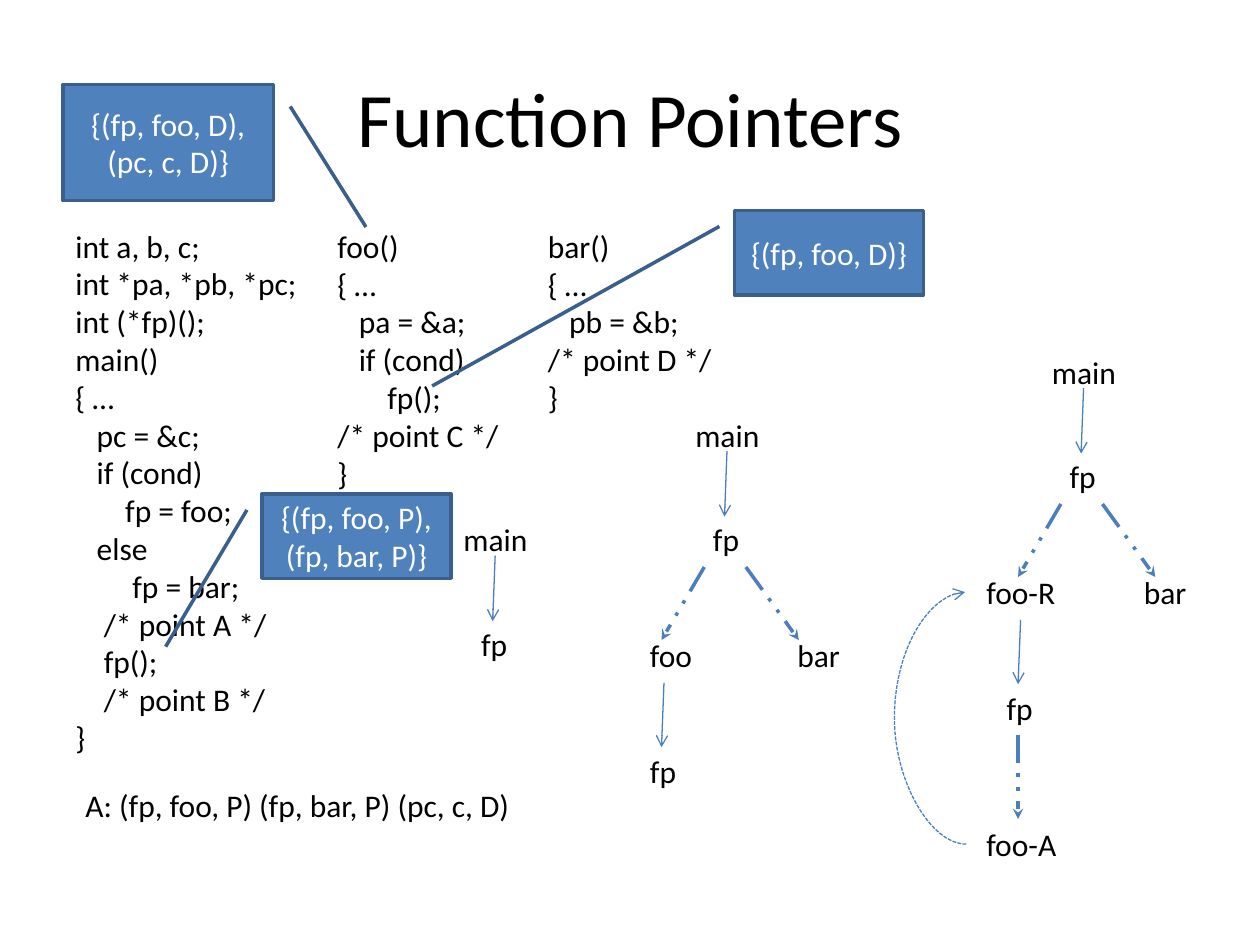
"""Build the Function Pointers slide with code columns, callouts and call graphs."""
from pptx import Presentation
from pptx import util as u
from pptx.dml import color
from pptx.enum import dml, shapes, text
from pptx.oxml import ns, xmlchemy

COLORS = {"text": "000000", "edge": "4B7EBC", "fill": "4F81BD", "border": "3A5F8C", "callout": "FFFFFF"}
SPACE_WIDTH = 0.0565
LABEL_WIDTHS = {"main": 0.72, "fp": 0.41, "foo": 0.54, "bar": 0.54, "foo-R": 0.75, "foo-A": 0.76}

presentation = Presentation()
presentation.slide_width, presentation.slide_height = u.Inches(10), u.Inches(7.5)
slide = presentation.slides.add_slide(presentation.slide_layouts[5])


def add_text(lines, left, top, width, height=0.4, wrap=True):
    box = slide.shapes.add_textbox(*map(u.Inches, (left, top, width, height)))
    frame = box.text_frame
    frame.word_wrap = wrap
    frame.auto_size = text.MSO_AUTO_SIZE.SHAPE_TO_FIT_TEXT
    frame.text = "\n".join(line.strip() for line in lines)
    for line, paragraph in zip(lines, frame.paragraphs):
        font = paragraph.font
        font.name, font.size = "Calibri", u.Pt(18)
        font.color.rgb = color.RGBColor.from_string(COLORS["text"])
        indent = len(line) - len(line.lstrip())
        if indent:
            margin = u.Inches(indent * SPACE_WIDTH)
            paragraph._p.get_or_add_pPr().set("marL", str(margin))


def add_arrow(start, end, weight=0.75, dash=None, head="arrow", kind=shapes.MSO_CONNECTOR.STRAIGHT):
    arrow = slide.shapes.add_connector(kind, *map(u.Inches, start + end))
    arrow.line.color.rgb = color.RGBColor.from_string(COLORS["edge"])
    arrow.line.width = u.Pt(weight)
    if dash:
        arrow.line.dash_style = dash
    tail = xmlchemy.OxmlElement("a:tailEnd")
    tail.set("type", head)
    properties = arrow._element.spPr
    properties.find(ns.qn("a:ln")).append(tail)
    properties.append(xmlchemy.OxmlElement("a:effectLst"))
    return arrow


title = slide.shapes.title
title.left, title.top, title.width, title.height = map(u.Inches, (0.5, 0.3, 9, 1.25))
title.text_frame.text = "Function Pointers"
title.text_frame.vertical_anchor = text.MSO_ANCHOR.MIDDLE
heading = title.text_frame.paragraphs[0]
heading.alignment = text.PP_ALIGN.CENTER
heading.font.name, heading.font.size = "Calibri", u.Pt(44)
heading.font.color.rgb = color.RGBColor.from_string(COLORS["text"])

main_code = """int a, b, c;
int *pa, *pb, *pc;
int (*fp)();
main()
{ …
   pc = &c;
   if (cond)
       fp = foo;
   else
        fp = bar;
    /* point A */
    fp();
    /* point B */
}"""
foo_code = """foo()
{ …
   pa = &a;
   if (cond)
       fp();
/* point C */
}"""
bar_code = """bar()
{ …
   pb = &b;
/* point D */
}"""
for code, left, width, height in [
    (main_code, 0.5, 2.17, 4.34),
    (foo_code, 2.58, 1.67, 2.22),
    (bar_code, 4.25, 1.67, 1.62),
]:
    add_text(code.split("\n"), left, 1.75, width, height)

labels = [("foo-A", 7.73, 6.5)]
branch_style = {"weight": 2, "dash": dml.MSO_LINE.DASH_DOT_DOT, "head": "stealth"}
for left, top, branches in [
    (3.58, 4.08, None),
    (5.42, 3.25, ("foo", -0.36, 0.81)),
    (8.25, 2.75, ("foo-R", -0.52, 0.73)),
]:
    labels += [("main", left, top), ("fp", left + 0.14, top + 0.83)]
    add_arrow((left + 0.35, top + 0.33), (left + 0.33, top + 0.85))
    if branches:
        callee, callee_shift, bar_shift = branches
        labels += [
            (callee, left + callee_shift, top + 1.75),
            ("bar", left + bar_shift, top + 1.75),
            ("fp", left - 0.36, top + 2.67),
        ]
        add_arrow((left + 0.17, top + 1.25), (left - 0.17, top + 1.83), **branch_style)
        add_arrow((left + 0.5, top + 1.25), (left + 0.92, top + 1.83), **branch_style)
        add_arrow((left - 0.15, top + 2.17), (left - 0.17, top + 2.68))
for label, left, top in labels:
    add_text([label], left, top, LABEL_WIDTHS[label], wrap=False)

add_arrow((8.08, 5.83), (8.08, 6.5), **branch_style)
recursion = add_arrow((7.67, 6.7), (7.66, 4.7), dash=dml.MSO_LINE.SQUARE_DOT, kind=shapes.MSO_CONNECTOR.CURVE)
guide = xmlchemy.OxmlElement("a:gd")
guide.set("name", "adj1")
guide.set("fmla", "val 5800000")
geometry = recursion._element.spPr.find(ns.qn("a:prstGeom"))
geometry.find(ns.qn("a:avLst")).append(guide)

for content, place, leader in [
    ("{(fp, foo, D),\n(pc, c, D)}", (0.5, 0.67, 1.67, 0.92), (0.19, 1.08, 1.23, 1.44)),
    ("{(fp, foo, P), (fp, bar, P)}", (2.08, 3.92, 1.5, 0.67), (0.19, -0.08, 1.81, -0.51)),
    ("{(fp, foo, D)}", (5.83, 1.67, 1.5, 0.67), (0.19, -0.08, 2.08, -1.6)),
]:
    callout = slide.shapes.add_shape(shapes.MSO_SHAPE.LINE_CALLOUT_1, *map(u.Inches, place))
    callout.shadow.inherit = False
    for index, value in enumerate(leader):
        callout.adjustments[index] = value
    callout.fill.solid()
    callout.fill.fore_color.rgb = color.RGBColor.from_string(COLORS["fill"])
    callout.line.color.rgb = color.RGBColor.from_string(COLORS["border"])
    callout.line.width = u.Pt(2)
    callout.text_frame.word_wrap = True
    callout.text_frame.vertical_anchor = text.MSO_ANCHOR.MIDDLE
    callout.text_frame.text = content
    for paragraph in callout.text_frame.paragraphs:
        paragraph.alignment = text.PP_ALIGN.CENTER
        paragraph.font.name, paragraph.font.size = "Calibri", u.Pt(18)
        paragraph.font.color.rgb = color.RGBColor.from_string(COLORS["callout"])

add_text(["A: (fp, foo, P) (fp, bar, P) (pc, c, D)"], 0.58, 6.19, 5.5)

presentation.save("out.pptx")
